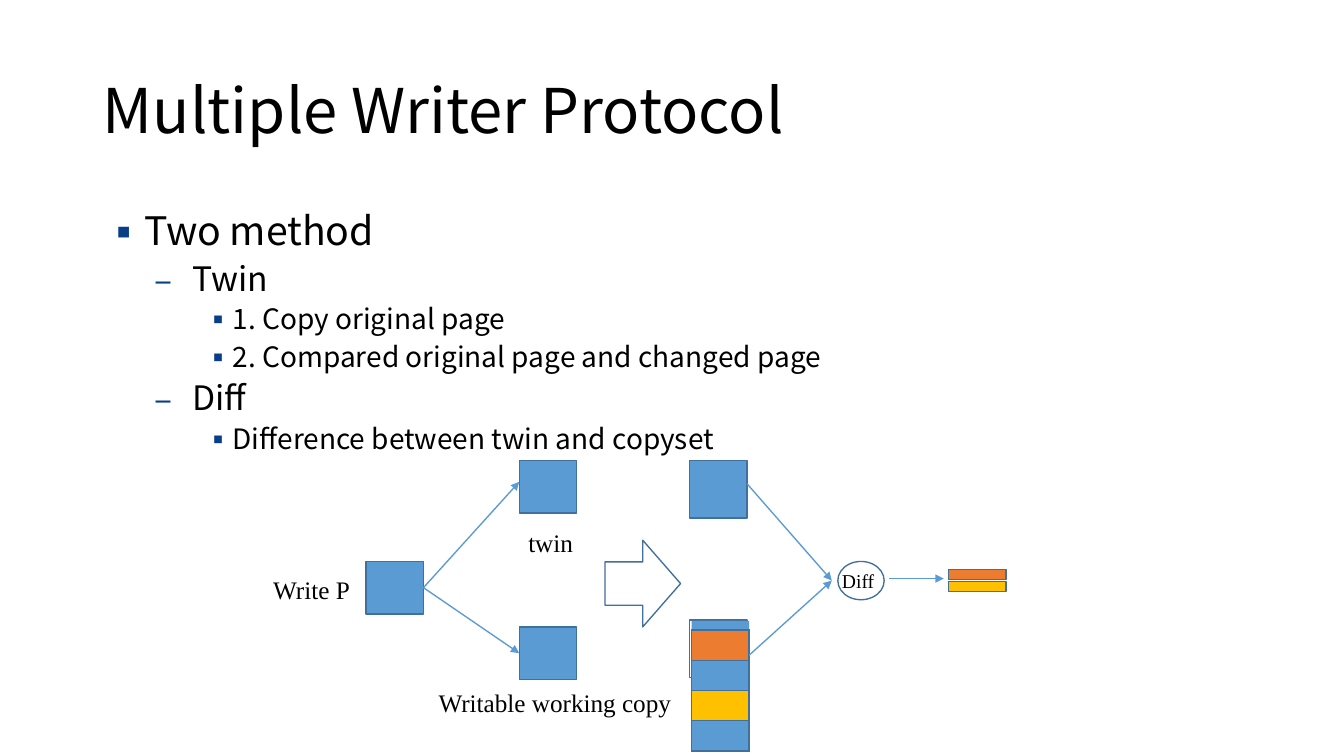
from lxml import etree
from pptx import Presentation
from pptx.dml.color import RGBColor
from pptx.enum.shapes import MSO_CONNECTOR, MSO_SHAPE
from pptx.enum.text import MSO_ANCHOR, MSO_AUTO_SIZE, PP_ALIGN
from pptx.oxml.ns import qn
from pptx.util import Inches, Pt

COLORS = {"blue": "5B9BD4", "outline": "41709C", "orange": "EC7C30",
          "yellow": "FFC000", "bullet": "083D87", "text": "000000"}
SANS, SERIF = "Noto Sans CJK KR", "Times New Roman"
LINE_WIDTH = 0.96

TITLE = "Multiple Writer Protocol"
OUTLINE = [
    (0, "Two method"),
    (1, "Twin"),
    (2, "1. Copy original page"),
    (2, "2. Compared original page and changed page"),
    (1, "Diff"),
    (2, "Difference between twin and copyset"),
]
# level: (bullet, size, left margin, hanging indent, space before)
LEVELS = [("▪", 28, 0.41, 0.39, 10), ("‒", 24, 0.89, 0.38, 2.8), ("▪", 20, 1.26, 0.25, 2.8)]

PAGE, SHORT, STRIP = 0.57, 0.52, 0.1
LEFT, TWIN, CHANGED, RESULT = 3.63, 5.15, 6.84, 9.41
# left, top, width, height, fill
BOXES = [
    (LEFT, 5.57, PAGE, SHORT, "blue"),
    (TWIN, 6.22, PAGE, SHORT, "blue"),
    (TWIN, 4.57, PAGE, SHORT, "blue"),
    (CHANGED, 4.57, PAGE, PAGE, "blue"),
    (CHANGED, 6.15, PAGE, PAGE, None),
    (RESULT, 5.65, PAGE, STRIP, "orange"),
    (RESULT, 5.77, PAGE, STRIP, "yellow"),
]
COPY_ROWS = ["orange", "blue", "yellow", "blue"]
COPY_LEFT, COPY_TOP, ROW_HEIGHT = 6.86, 6.25, 0.3
LABELS = [
    ("twin", 5.23, 5.23, 0.47, 0.31, 18),
    ("Writable working copy", 4.34, 6.82, 2.34, 0.31, 18),
    ("Write P", 2.7, 5.7, 0.79, 0.31, 18),
    ("Diff", 8.34, 5.64, 0.35, 0.25, 14),
]
ARROWS = [
    ((4.2, 5.83), (5.15, 4.78)),
    ((4.2, 5.83), (5.15, 6.48)),
    ((7.41, 4.8), (8.25, 5.76)),
    ((7.43, 6.5), (8.25, 5.76)),
    ((8.82, 5.74), (9.36, 5.74)),
]


def rgb(name):
    return RGBColor.from_string(COLORS[name])


def add_xml(parent, tag, **attributes):
    return etree.SubElement(parent, qn(tag), attributes)


def place(shape, *box):
    shape.left, shape.top, shape.width, shape.height = map(Inches, box)


def style_runs(paragraph, font_name, size):
    for run in paragraph.runs:
        run.font.name, run.font.size = font_name, Pt(size)
        run.font.color.rgb = rgb("text")
        add_xml(run.font._element, "a:ea", typeface=font_name)


def add_figure(slide, kind, box, fill=None, line="outline"):
    shape = slide.shapes.add_shape(kind, *map(Inches, box))
    shape.shadow.inherit = False
    if fill:
        shape.fill.solid()
        shape.fill.fore_color.rgb = rgb(fill)
    else:
        shape.fill.background()
    if line:
        shape.line.color.rgb = rgb(line)
        shape.line.width = Pt(LINE_WIDTH)
    else:
        shape.line.fill.background()


def add_arrow(slide, start, end):
    arrow = slide.shapes.add_connector(MSO_CONNECTOR.STRAIGHT, *map(Inches, start + end))
    arrow.line.color.rgb = rgb("blue")
    arrow.line.width = Pt(LINE_WIDTH)
    add_xml(arrow.line._get_or_add_ln(), "a:tailEnd", type="triangle", w="med", len="med")
    add_xml(arrow._element.spPr, "a:effectLst")


def add_label(slide, text, left, top, width, height, size):
    label = slide.shapes.add_textbox(*map(Inches, (left, top, width, height)))
    frame = label.text_frame
    frame.margin_left = frame.margin_right = frame.margin_top = frame.margin_bottom = 0
    frame.text = text
    frame.paragraphs[0]._p.get_or_add_pPr().set("marL", str(Inches(0.01)))
    style_runs(frame.paragraphs[0], SERIF, size)


def fill_title(title):
    place(title, 0.92, 0.4, 11.5, 1.45)
    frame = title.text_frame
    frame.text = TITLE
    frame.auto_size = MSO_AUTO_SIZE.NONE
    frame.vertical_anchor = MSO_ANCHOR.MIDDLE
    paragraph = frame.paragraphs[0]
    paragraph.alignment, paragraph.line_spacing = PP_ALIGN.LEFT, 0.9
    style_runs(paragraph, SANS, 44)


def fill_outline(body):
    place(body, 0.92, 2, 11.5, 4.76)
    frame = body.text_frame
    frame.text = "\n".join(text for _, text in OUTLINE)
    frame.auto_size = MSO_AUTO_SIZE.NONE
    for paragraph, (level, _) in zip(frame.paragraphs, OUTLINE):
        bullet, size, margin, hanging, before = LEVELS[level]
        paragraph.level = level
        paragraph.space_before = Pt(before)
        properties = paragraph._p.get_or_add_pPr()
        properties.set("marL", str(Inches(margin)))
        properties.set("indent", str(-Inches(hanging)))
        add_xml(add_xml(properties, "a:buClr"), "a:srgbClr", val=COLORS["bullet"])
        add_xml(properties, "a:buFont", typeface=SANS)
        add_xml(properties, "a:buChar", char=bullet)
        style_runs(paragraph, SANS, size)


def add_working_copy(slide):
    """Draw the changed page as a one-column table."""
    count = len(COPY_ROWS)
    box = (COPY_LEFT, COPY_TOP, PAGE, count * ROW_HEIGHT)
    table = slide.shapes.add_table(count, 1, *map(Inches, box)).table
    for row, fill in zip(table.rows, COPY_ROWS):
        row.height = Inches(ROW_HEIGHT)
        cell = row.cells[0]
        cell.margin_left = cell.margin_right = cell.margin_top = cell.margin_bottom = 0
        cell.text_frame.paragraphs[0].font.size = Pt(12)
        properties = cell._tc.get_or_add_tcPr()
        for side in ("a:lnL", "a:lnR", "a:lnT", "a:lnB"):
            border = add_xml(properties, side, w=str(Pt(LINE_WIDTH)))
            add_xml(add_xml(border, "a:solidFill"), "a:srgbClr", val=COLORS["outline"])
        cell.fill.solid()
        cell.fill.fore_color.rgb = rgb(fill)


def main():
    presentation = Presentation()
    presentation.slide_width, presentation.slide_height = Inches(13.33), Inches(7.5)
    slide = presentation.slides.add_slide(presentation.slide_layouts[1])
    fill_title(slide.shapes.title)
    fill_outline(slide.placeholders[1])
    for *box, fill in BOXES:
        add_figure(slide, MSO_SHAPE.RECTANGLE, box, fill)
    add_figure(slide, MSO_SHAPE.RECTANGLE, (COPY_LEFT, 6.16, PAGE, 0.09), "blue", None)
    add_working_copy(slide)
    add_figure(slide, MSO_SHAPE.OVAL, (8.31, 5.57, 0.46, 0.38))
    add_figure(slide, MSO_SHAPE.RIGHT_ARROW, (6, 5.36, 0.75, 0.86))
    for label in LABELS:
        add_label(slide, *label)
    for start, end in ARROWS:
        add_arrow(slide, start, end)
    presentation.save("out.pptx")


if __name__ == "__main__":
    main()
